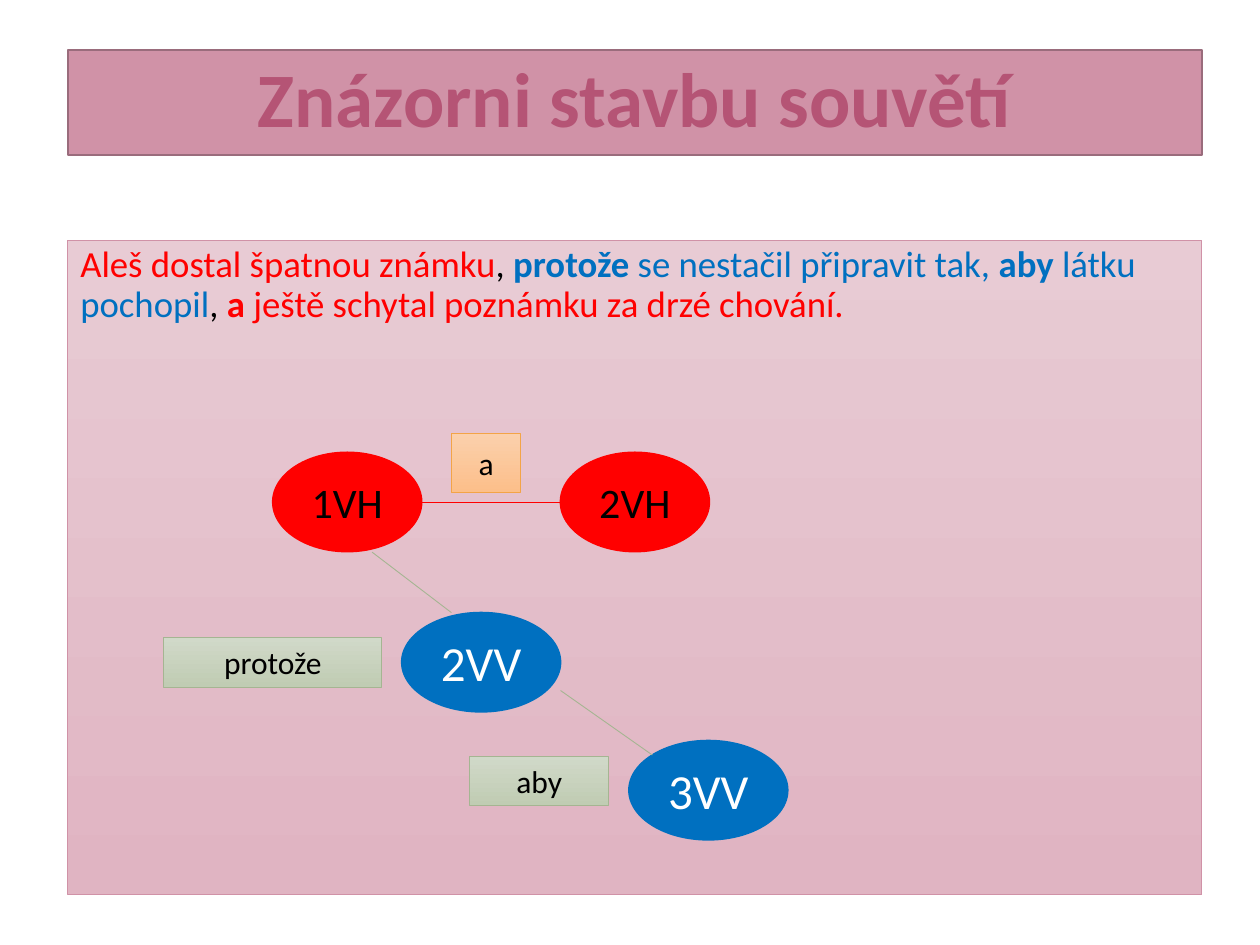
from dataclasses import dataclass

from lxml import etree
from pptx import Presentation
from pptx import util as u
from pptx.dml.color import RGBColor
from pptx.enum import shapes, text
from pptx.oxml.ns import qn

FONT = "Calibri"
COLORS = {
    "red": "FF0000", "blue": "0070C0", "black": "000000", "white": "FFFFFF",
    "title_fill": "D092A7", "title_line": "9A6C7C", "title_text": "B55475",
    "panel_top": "E8CBD4", "panel_bottom": "E0B4C2",
    "orange_top": "FBD0AC", "orange_bottom": "FCBF8A", "orange_line": "F3A447",
    "green_top": "D1D9C9", "green_bottom": "C0CCB3", "green_line": "A5B592",
}


@dataclass
class Clause:
    label: str
    left: float
    top: float
    width: float
    color: str
    text_color: str
    size: int


@dataclass
class Conjunction:
    word: str
    left: float
    top: float
    width: float
    height: float
    palette: str


@dataclass
class Link:
    start: tuple[float, float]
    end: tuple[float, float]
    color: str


CLAUSE_HEIGHT = 2.0
CLAUSES = [
    Clause("1VH", 5.5, 9.12, 3.0, "red", "black", 24),
    Clause("2VH", 11.3, 9.12, 3.0, "red", "black", 24),
    Clause("3VV", 12.68, 14.93, 3.2, "blue", "white", 28),
    Clause("2VV", 8.1, 12.35, 3.2, "blue", "white", 28),
]
LINKS = [
    Link((8.5, 10.13), (11.3, 10.13), "red"),
    Link((7.5, 11.13), (9.1, 12.35), "green_line"),
    Link((11.3, 13.92), (13.15, 15.22), "green_line"),
]
CONJUNCTIONS = [
    Conjunction("a", 9.1, 8.73, 1.4, 1.2, "orange"),
    Conjunction("protože", 3.3, 12.85, 4.4, 1.0, "green"),
    Conjunction("aby", 9.47, 15.24, 2.8, 1.0, "green"),
]
# Text, colour, bold
SENTENCE = [
    ("Aleš dostal špatnou známku", "red", False),
    (", ", "black", False),
    ("protože", "blue", True),
    (" se nestačil připravit tak, ", "blue", False),
    ("aby", "blue", True),
    (" látku pochopil", "blue", False),
    (", ", "black", False),
    ("a", "red", True),
    (" ještě schytal poznámku za drzé chování.", "red", False),
]


def rgb(name: str) -> RGBColor:
    return RGBColor.from_string(COLORS[name])


def format_run(run, size: int, color: str, bold: bool = False) -> None:
    run.font.name = FONT
    run.font.size = u.Pt(size)
    run.font.bold = bold
    run.font.color.rgb = rgb(color)


def set_label(shape, label: str, size: int, color: str, bold: bool = False) -> None:
    frame = shape.text_frame
    frame.text = label
    frame.word_wrap = True
    frame.vertical_anchor = text.MSO_ANCHOR.MIDDLE
    paragraph = frame.paragraphs[0]
    paragraph.alignment = text.PP_ALIGN.CENTER
    format_run(paragraph.runs[0], size, color, bold)


def set_solid(shape, fill: str, line: str) -> None:
    shape.fill.solid()
    shape.fill.fore_color.rgb = rgb(fill)
    shape.line.color.rgb = rgb(line)
    shape.line.width = u.Pt(1)


def set_gradient(shape, palette: str, line: str) -> None:
    shape.fill.gradient()
    shape.fill.gradient_angle = 270
    for stop, end in zip(shape.fill.gradient_stops, ("top", "bottom")):
        stop.color.rgb = rgb(f"{palette}_{end}")
    shape.line.color.rgb = rgb(line)
    shape.line.width = u.Pt(0.5)


def add_figure(slide, kind, left: float, top: float, width: float, height: float):
    shape = slide.shapes.add_shape(kind, u.Cm(left), u.Cm(top), u.Cm(width), u.Cm(height))
    shape.shadow.inherit = False
    return shape


def add_title(slide) -> None:
    title = slide.shapes.title
    title.left, title.top = u.Cm(1.37), u.Cm(1.01)
    title.width, title.height = u.Cm(22.86), u.Cm(2.11)
    set_solid(title, "title_fill", "title_line")
    set_label(title, "Znázorni stavbu souvětí", 44, "title_text", True)
    title.text_frame.paragraphs[0].line_spacing = 0.9


def add_sentence_panel(slide) -> None:
    panel = add_figure(slide, shapes.MSO_SHAPE.RECTANGLE, 1.37, 4.84, 22.86, 13.2)
    set_gradient(panel, "panel", "title_fill")
    frame = panel.text_frame
    frame.word_wrap = True
    frame.vertical_anchor = text.MSO_ANCHOR.TOP
    paragraph = frame.paragraphs[0]
    paragraph.alignment = text.PP_ALIGN.LEFT
    paragraph.line_spacing = 0.9
    paragraph.space_before = u.Pt(7.5)
    for words, color, bold in SENTENCE:
        run = paragraph.add_run()
        run.text = words
        format_run(run, 21, color, bold)


def add_clause(slide, clause: Clause) -> None:
    oval = add_figure(slide, shapes.MSO_SHAPE.OVAL, clause.left, clause.top,
                      clause.width, CLAUSE_HEIGHT)
    set_solid(oval, clause.color, clause.color)
    set_label(oval, clause.label, clause.size, clause.text_color)


def add_link(slide, link: Link) -> None:
    points = [u.Cm(value) for value in link.start + link.end]
    connector = slide.shapes.add_connector(shapes.MSO_CONNECTOR.STRAIGHT, *points)
    connector.line.color.rgb = rgb(link.color)
    connector.line.width = u.Pt(0.5)
    etree.SubElement(connector._element.spPr, qn("a:effectLst"))


def add_conjunction(slide, item: Conjunction) -> None:
    box = add_figure(slide, shapes.MSO_SHAPE.RECTANGLE, item.left, item.top,
                     item.width, item.height)
    set_gradient(box, item.palette, f"{item.palette}_line")
    set_label(box, item.word, 18, "black")


def main() -> None:
    presentation = Presentation()
    presentation.slide_width, presentation.slide_height = u.Cm(25.4), u.Cm(19.05)
    slide = presentation.slides.add_slide(presentation.slide_layouts[5])

    # Heading and sentence
    add_title(slide)
    add_sentence_panel(slide)

    # Sentence diagram
    for clause in CLAUSES:
        add_clause(slide, clause)
    for link in LINKS:
        add_link(slide, link)
    for item in CONJUNCTIONS:
        add_conjunction(slide, item)

    presentation.save("out.pptx")


if __name__ == "__main__":
    main()
